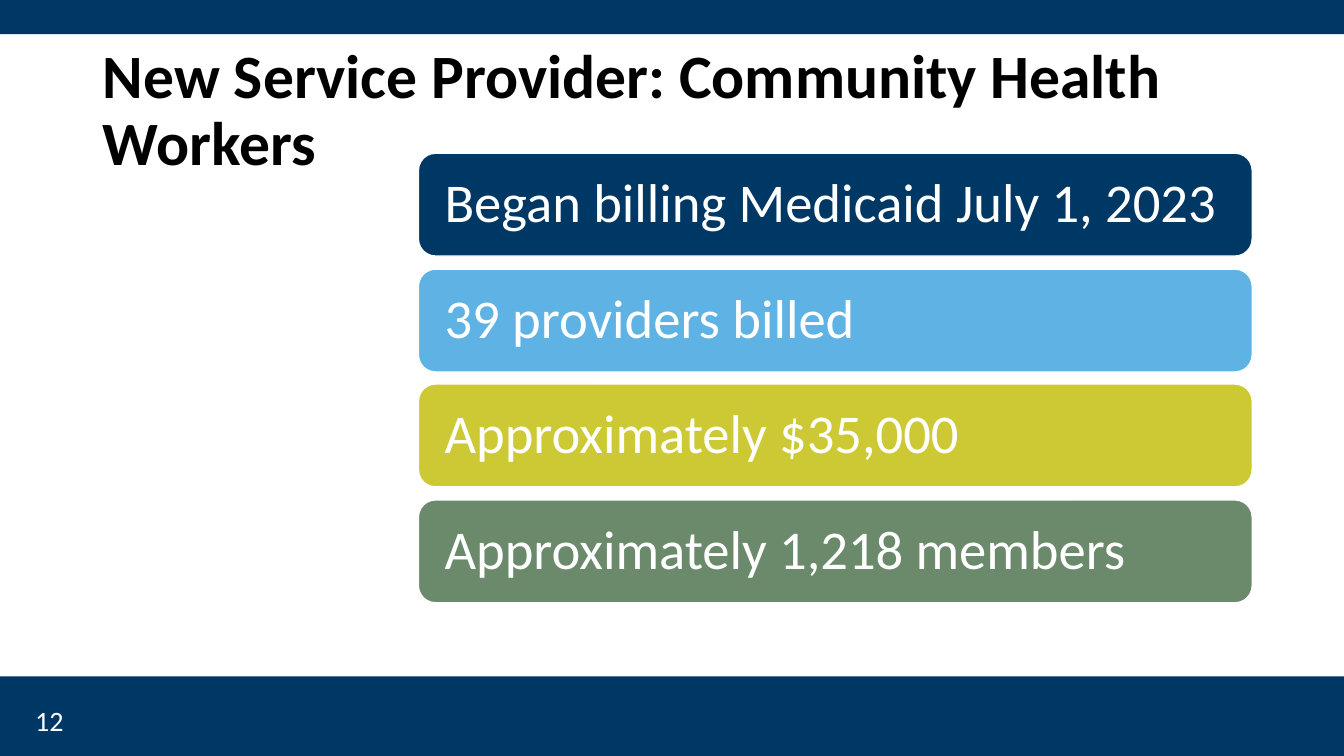
import pptx
import pptx.dml.color
import pptx.enum.shapes
import pptx.enum.text
import pptx.util

EMU_PER_PX = 9144
FONT = "Calibri"
COLORS = {
    "navy": "003865",
    "sky": "5EB3E4",
    "lime": "CDC935",
    "sage": "6B896B",
    "white": "FFFFFF",
    "black": "000000",
}
FACTS = [
    ("Began billing Medicaid July 1, 2023", "navy"),
    ("39 providers billed", "sky"),
    ("Approximately $35,000", "lime"),
    ("Approximately 1,218 members", "sage"),
]
FACTS_TOP = 152
LAST_FACT_TOP = 496


def px(length):
    return pptx.util.Emu(length * EMU_PER_PX)


def rgb(name):
    return pptx.dml.color.RGBColor.from_string(COLORS[name])


def write(frame, text, size, color, bold=False, spacing=1.0):
    frame.word_wrap = True
    frame.auto_size = pptx.enum.text.MSO_AUTO_SIZE.NONE
    paragraph = frame.paragraphs[0]
    paragraph.text = text
    paragraph.alignment = pptx.enum.text.PP_ALIGN.LEFT
    paragraph.line_spacing = spacing
    paragraph.font.name = FONT
    paragraph.font.size = pptx.util.Pt(size)
    paragraph.font.bold = bold
    paragraph.font.color.rgb = rgb(color)


def add_block(slide, preset, left, top, width, height, color):
    block = slide.shapes.add_shape(preset, px(left), px(top), px(width), px(height))
    block.shadow.inherit = False
    block.fill.solid()
    block.fill.fore_color.rgb = rgb(color)
    block.line.fill.background()
    return block


def add_band(slide, top, height):
    add_block(slide, pptx.enum.shapes.MSO_SHAPE.RECTANGLE, 0, top, 1333, height, "navy")


def add_fact(slide, top, text, color):
    fact = add_block(slide, pptx.enum.shapes.MSO_SHAPE.ROUNDED_RECTANGLE,
                     415, top, 827, 102, color)
    fact.line.color.rgb = rgb("white")
    fact.line.width = pptx.util.Pt(1)
    frame = fact.text_frame
    frame.margin_left = frame.margin_right = px(21)
    frame.vertical_anchor = pptx.enum.text.MSO_ANCHOR.MIDDLE
    write(frame, text, 39, "white", spacing=0.9)


def set_title(slide, text):
    title = slide.shapes.title
    title.left, title.top, title.width, title.height = map(px, (92, 40, 1150, 145))
    title.text_frame.vertical_anchor = pptx.enum.text.MSO_ANCHOR.TOP
    write(title.text_frame, text, 44, "black", bold=True, spacing=0.9)


def add_page_number(slide, number):
    page_number = slide.shapes.add_textbox(px(25), px(693), px(300), px(40))
    write(page_number.text_frame, number, 20, "white")


def main():
    deck = pptx.Presentation()
    deck.slide_width, deck.slide_height = px(1333), px(750)
    slide = deck.slides.add_slide(deck.slide_layouts[5])
    add_band(slide, 0, 34)
    add_band(slide, 671, 79)
    set_title(slide, "New Service Provider: Community Health Workers")
    pitch = (LAST_FACT_TOP - FACTS_TOP) / (len(FACTS) - 1)
    for index, (text, color) in enumerate(FACTS):
        add_fact(slide, FACTS_TOP + round(index * pitch), text, color)
    add_page_number(slide, "12")
    deck.save("out.pptx")


if __name__ == "__main__":
    main()
